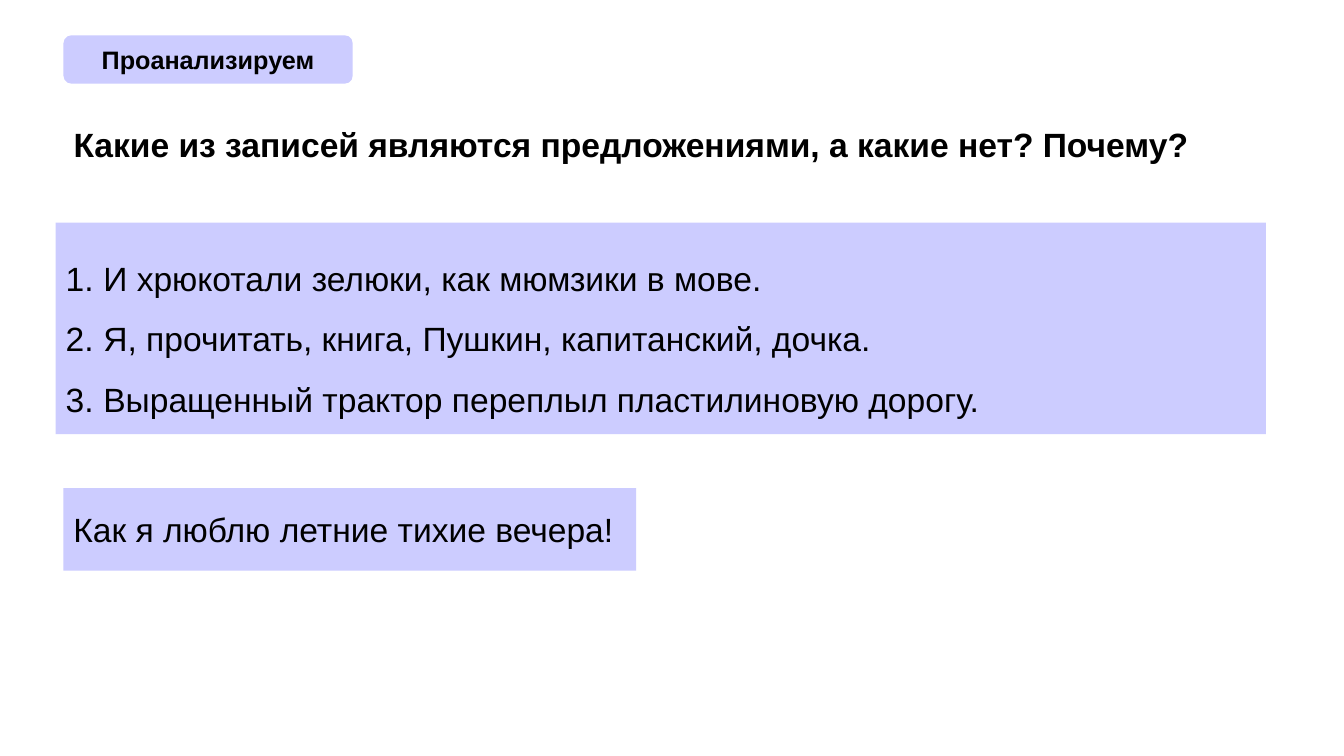
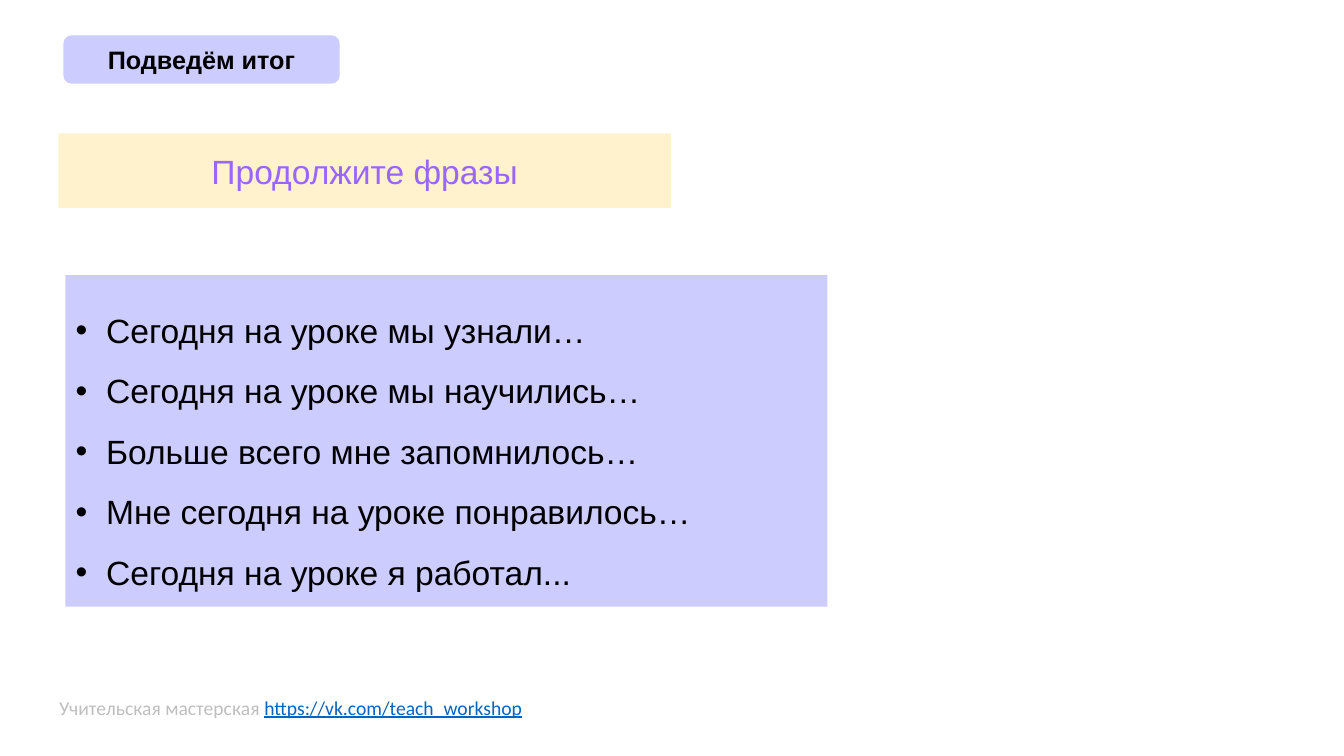
from dataclasses import dataclass

from lxml.etree import SubElement
from pptx import Presentation
from pptx.dml.color import RGBColor
from pptx.enum.shapes import MSO_SHAPE
from pptx.enum.text import MSO_ANCHOR, MSO_AUTO_SIZE, PP_ALIGN
from pptx.oxml.ns import qn
from pptx.util import Cm, Pt


@dataclass(frozen=True)
class Theme:
    lilac: str = "CCCCFF"
    cream: str = "FFF2CC"
    violet: str = "9966FF"
    ink: str = "000000"
    grey: str = "BFBFBF"
    blue: str = "0563C1"
    font: str = "Arial"
    small: str = "Calibri"
    main: int = 24
    tag: int = 18
    foot: int = 14


THEME = Theme()


def place(shape, box):
    shape.left, shape.top, shape.width, shape.height = map(Cm, box)


def paint(shape, color):
    shape.fill.solid()
    shape.fill.fore_color.rgb = RGBColor.from_string(color)
    shape.line.fill.background()


def frame(shape, anchor=MSO_ANCHOR.MIDDLE):
    text = shape.text_frame
    text.word_wrap = True
    text.auto_size = MSO_AUTO_SIZE.NONE
    text.vertical_anchor = anchor
    return text


def write(para, words, size=THEME.main, color=THEME.ink, bold=False,
          name=THEME.font, line=False):
    run = para.add_run()
    run.text = words
    font = run.font
    font.name, font.size, font.bold, font.underline = name, Pt(size), bold, line
    font.color.rgb = RGBColor.from_string(color)


def add_panel(slide, kind, box):
    shape = slide.shapes.add_shape(kind, *map(Cm, box))
    shape.shadow.inherit = False
    paint(shape, THEME.lilac)
    return shape


def add_tag(slide, words, width):
    tag = add_panel(slide, MSO_SHAPE.ROUNDED_RECTANGLE, (1.6, 0.89, width, 1.22))
    para = frame(tag).paragraphs[0]
    para.alignment = PP_ALIGN.CENTER
    write(para, words, THEME.tag, bold=True)


def set_title(slide, words, box, align=PP_ALIGN.LEFT, fill=None, **style):
    title = slide.shapes.title
    place(title, box)
    if fill:
        paint(title, fill)
    para = frame(title).paragraphs[0]
    para.alignment = align
    write(para, words, **style)


def mark(para, indent, number):
    """Give the paragraph a hanging number or a round bullet."""
    props = para._p.get_or_add_pPr()
    props.set("marL", str(Cm(indent)))
    props.set("indent", str(-Cm(indent)))
    SubElement(props, qn("a:buFont")).set("typeface", THEME.font)
    if number:
        SubElement(props, qn("a:buAutoNum")).set("type", "arabicPeriod")
    else:
        SubElement(props, qn("a:buChar")).set("char", "•")


def set_list(slide, items, box, indent, number=False):
    body = slide.placeholders[1]
    place(body, box)
    paint(body, THEME.lilac)
    text = frame(body)
    for i, item in enumerate(items):
        para = text.add_paragraph() if i else text.paragraphs[0]
        mark(para, indent, number)
        para.line_spacing = 1.5
        para.space_before = Pt(0)
        write(para, item)


def add_note(slide, words, box):
    note = add_panel(slide, MSO_SHAPE.RECTANGLE, box)
    para = frame(note).paragraphs[0]
    para.alignment = PP_ALIGN.LEFT
    write(para, words)


def add_foot(slide, label, site, box):
    foot = slide.shapes.add_textbox(*map(Cm, box))
    para = frame(foot, MSO_ANCHOR.TOP).paragraphs[0]
    write(para, label, THEME.foot, THEME.grey, name=THEME.small)
    write(para, site, THEME.foot, THEME.blue, name=THEME.small, line=True)


def build_task(slide):
    add_tag(slide, "Проанализируем", 7.29)
    set_title(slide, "Какие из записей являются предложениями, а какие нет? Почему?",
              (1.6, 3, 29, 1.28), bold=True)
    set_list(slide, (
        "И хрюкотали зелюки, как мюмзики в мове.",
        "Я, прочитать, книга, Пушкин, капитанский, дочка.",
        "Выращенный трактор переплыл пластилиновую дорогу.",
    ), (1.4, 5.61, 30.5, 5.33), 0.95, number=True)
    add_note(slide, "Как я люблю летние тихие вечера!", (1.6, 12.3, 14.43, 2.08))


def build_end(slide):
    add_tag(slide, "Подведём итог", 6.96)
    set_title(slide, "Продолжите фразы", (1.47, 3.36, 15.44, 1.88),
              PP_ALIGN.CENTER, THEME.cream, color=THEME.violet)
    set_list(slide, (
        "Сегодня на уроке мы узнали…",
        "Сегодня на уроке мы научились…",
        "Больше всего мне запомнилось…",
        "Мне сегодня на уроке понравилось…",
        "Сегодня на уроке я работал...",
    ), (1.65, 6.93, 19.2, 8.36), 0.77)
    add_foot(slide, "Учительская мастерская ", "https://vk.com/teach_workshop",
             (1.24, 17.4, 18.16, 0.86))


def main():
    deck = Presentation()
    deck.slide_width, deck.slide_height = Cm(33.87), Cm(19.05)
    for build in (build_task, build_end):
        build(deck.slides.add_slide(deck.slide_layouts[1]))
    deck.save("out.pptx")


if __name__ == "__main__":
    main()
